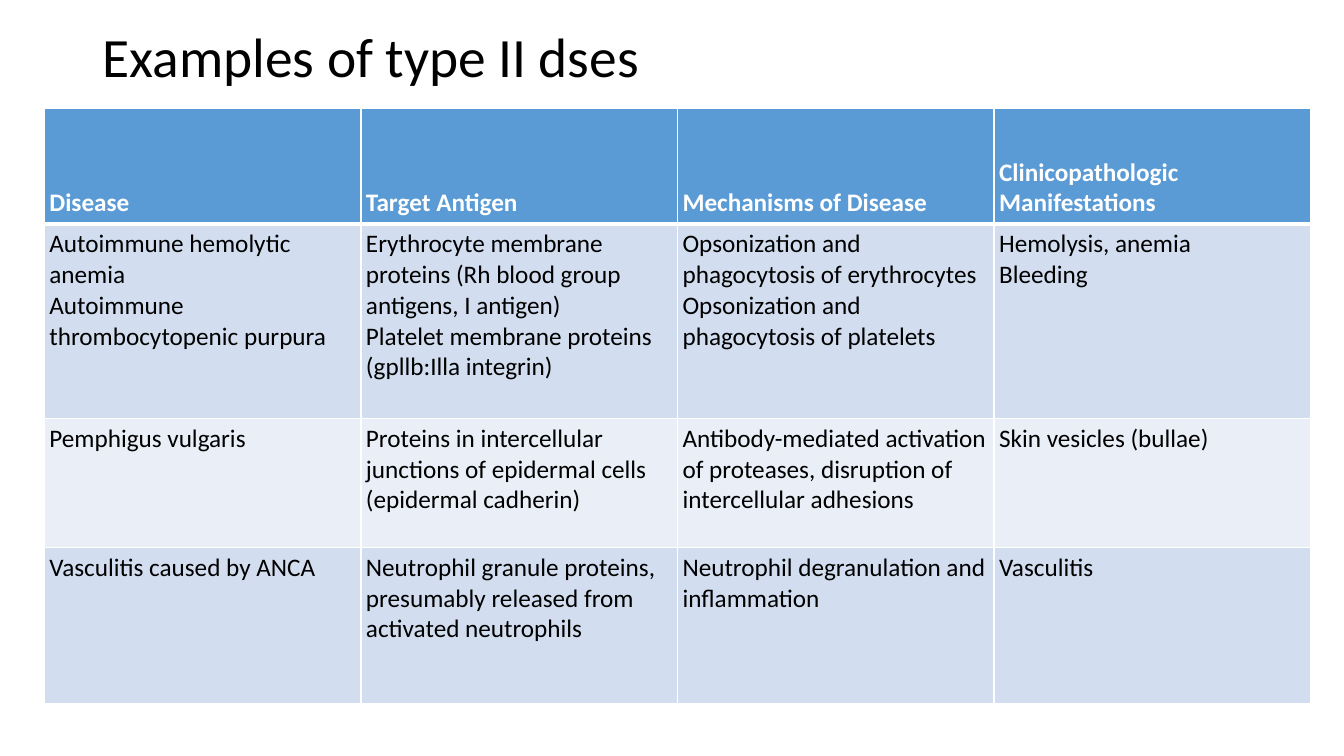
import pptx
import pptx.dml.color
import pptx.enum.text
import pptx.oxml
import pptx.oxml.ns
import pptx.util

PAGE_WIDTH, PAGE_HEIGHT = 13.33, 7.5
FONT = "Calibri"
COLORS = {
    "text": "000000",
    "header_text": "FFFFFF",
    "header": "5B9BD5",
    "band_dark": "D2DEEF",
    "band_light": "EAEFF7",
    "border": "FFFFFF",
}
ANCHOR = pptx.enum.text.MSO_ANCHOR
COLUMN_WIDTH = 3.14
ROW_HEIGHTS = [1.14, 1.93, 1.28, 1.55]
CELL_MARGIN = 0.05

DISEASES = [
    ["Disease", "Target Antigen", "Mechanisms of Disease",
     "Clinicopathologic Manifestations"],
    ["Autoimmune hemolytic anemia\nAutoimmune thrombocytopenic purpura",
     "Erythrocyte membrane proteins (Rh blood group antigens, I antigen)\n"
     "Platelet membrane proteins (gpllb:Illa integrin)",
     "Opsonization and phagocytosis of erythrocytes\n"
     "Opsonization and phagocytosis of platelets",
     "Hemolysis, anemia\nBleeding"],
    ["Pemphigus vulgaris",
     "Proteins in intercellular junctions of epidermal cells (epidermal cadherin)",
     "Antibody-mediated activation of proteases, disruption of intercellular adhesions",
     "Skin vesicles (bullae)"],
    ["Vasculitis caused by ANCA",
     "Neutrophil granule proteins, presumably released from activated neutrophils",
     "Neutrophil degranulation and inflammation",
     "Vasculitis"],
]


def rgb(name):
    return pptx.dml.color.RGBColor.from_string(COLORS[name])


def write_text(para, text, size=18, color="text", bold=False, line_spacing=None):
    """Write text into a paragraph; each newline becomes a line break."""
    if line_spacing:
        para.line_spacing = line_spacing
    for index, line in enumerate(text.split("\n")):
        if index:
            para.add_line_break()
        span = para.add_run()
        span.text = line
        span.font.name = FONT
        span.font.size = pptx.util.Pt(size)
        span.font.bold = bold
        span.font.color.rgb = rgb(color)


def add_title(page, text):
    box = page.shapes.add_textbox(
        *map(pptx.util.Inches, (0.92, 0.4, 11.5, 0.39)))
    frame = box.text_frame
    frame.word_wrap = True
    frame.auto_size = pptx.enum.text.MSO_AUTO_SIZE.NONE
    frame.vertical_anchor = ANCHOR.MIDDLE
    write_text(frame.paragraphs[0], text, size=39.6, line_spacing=0.9)


def set_borders(cell, top=1, bottom=1):
    """Draw the four cell borders, with widths in points."""
    properties = cell._tc.get_or_add_tcPr()
    widths = {"lnL": 1, "lnR": 1, "lnT": top, "lnB": bottom}
    for index, (side, width) in enumerate(widths.items()):
        properties.insert(index, pptx.oxml.parse_xml(
            f'<a:{side} {pptx.oxml.ns.nsdecls("a")} w="{pptx.util.Pt(width)}">'
            f'<a:solidFill><a:srgbClr val="{COLORS["border"]}"/></a:solidFill>'
            f'</a:{side}>'))


def fill_cell(cell, text, row):
    header = row == 0
    band = "band_dark" if row % 2 else "band_light"
    cell.fill.solid()
    cell.fill.fore_color.rgb = rgb("header" if header else band)
    margin = pptx.util.Inches(CELL_MARGIN)
    cell.margin_left = cell.margin_right = margin
    cell.margin_top = cell.margin_bottom = margin
    cell.vertical_anchor = ANCHOR.BOTTOM if header else ANCHOR.TOP
    write_text(cell.text_frame.paragraphs[0], text, bold=header,
               color="header_text" if header else "text")
    set_borders(cell, top=3 if row == 1 else 1, bottom=3 if header else 1)


def add_disease_table(page, left, top):
    columns = len(DISEASES[0])
    size = (left, top, columns * COLUMN_WIDTH, sum(ROW_HEIGHTS))
    table = page.shapes.add_table(
        len(DISEASES), columns, *map(pptx.util.Inches, size)).table
    table.horz_banding = False
    for column in table.columns:
        column.width = pptx.util.Inches(COLUMN_WIDTH)
    for row, texts in enumerate(DISEASES):
        table.rows[row].height = pptx.util.Inches(ROW_HEIGHTS[row])
        for column, text in enumerate(texts):
            fill_cell(table.cell(row, column), text, row)


def main():
    deck = pptx.Presentation()
    deck.slide_width = pptx.util.Inches(PAGE_WIDTH)
    deck.slide_height = pptx.util.Inches(PAGE_HEIGHT)
    page = deck.slides.add_slide(deck.slide_layouts[6])

    # Heading
    add_title(page, "Examples of type II dses")

    # Diseases with their antigens, mechanisms and manifestations
    add_disease_table(page, left=0.44, top=1.08)

    deck.save("out.pptx")


if __name__ == "__main__":
    main()
